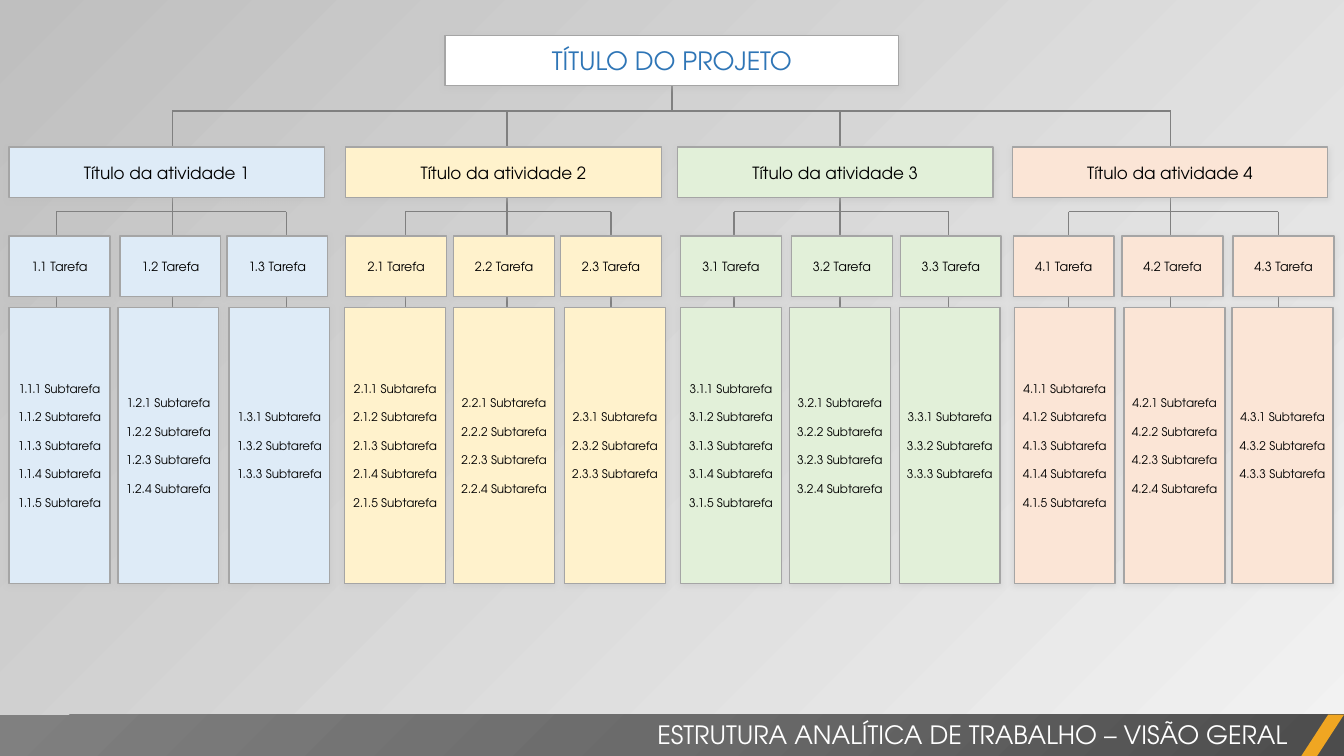
from lxml import etree
from pptx import Presentation
from pptx.dml.color import RGBColor
from pptx.enum.shapes import MSO_CONNECTOR, MSO_SHAPE
from pptx.enum.text import MSO_ANCHOR, MSO_AUTO_SIZE, PP_ALIGN
from pptx.oxml import parse_xml
from pptx.oxml.ns import qn
from pptx.util import Inches, Pt

STRAIGHT = MSO_CONNECTOR.STRAIGHT
RECTANGLE, SLANT = MSO_SHAPE.RECTANGLE, MSO_SHAPE.PARALLELOGRAM
MIDDLE, TOP = MSO_ANCHOR.MIDDLE, MSO_ANCHOR.TOP
CENTER, RIGHT = PP_ALIGN.CENTER, PP_ALIGN.RIGHT
FIXED = MSO_AUTO_SIZE.NONE

WIDTH, HEIGHT = 13.33, 7.5
FONT = "TeX Gyre Adventor"
COLORS = {
    "white": "FFFFFF", "black": "000000", "title": "2E75B6",
    "edge": "A5A5A5", "link": "808080", "shadow": "BFBFBF",
    "light": "F2F2F2", "dark": "BFBFBF", "accent": "F0A622",
    "bar_start": "4C4C4C", "bar_middle": "6B6B6B", "bar_end": "808080",
}
GROUPS = [
    {"fill": "DEEBF7", "activity": 0.09, "stems": [0.56, 1.71, 2.84],
     "tasks": [0.09, 1.19, 2.25], "subtasks": [0.09, 1.17, 2.27]},
    {"fill": "FFF2CC", "activity": 3.43, "stems": [4.02, 5.03, 6.06],
     "tasks": [3.43, 4.5, 5.56], "subtasks": [3.42, 4.5, 5.6]},
    {"fill": "E2F0D9", "activity": 6.72, "stems": [7.28, 8.33, 9.41],
     "tasks": [6.75, 7.85, 8.93], "subtasks": [6.75, 7.83, 8.92]},
    {"fill": "FBE5D6", "activity": 10.04, "stems": [10.6, 11.61, 12.68],
     "tasks": [10.05, 11.13, 12.23], "subtasks": [10.06, 11.15, 12.22]},
]
SUBTASK_COUNTS = [5, 4, 3]
ACTIVITY_SIZE, TASK_SIZE = (3.13, 0.5), (1, 0.6)
ACTIVITY_DROP, TASK_DROP, SUBTASK_DROP = 1.11, 1.99, 2.7
MAIN_BUS_DROP, GROUP_BUS_DROP, STEM_END_DROP = 0.75, 1.75, 2.98
DRAWING = "http://schemas.openxmlformats.org/drawingml/2006/main"


def rgb(value):
    return RGBColor.from_string(value)


def inches(*lengths):
    return [Inches(length) for length in lengths]


def set_text(frame, lines, size, color, align=CENTER, gap=0, **settings):
    for name, value in {"word_wrap": True, "vertical_anchor": MIDDLE, **settings}.items():
        setattr(frame, name, value)
    for index, line in enumerate(lines):
        para = frame.add_paragraph() if index else frame.paragraphs[0]
        para.alignment = align
        if index and gap:
            para.space_before = Pt(gap)
        span = para.add_run()
        span.text = line
        for name, value in {"name": FONT, "size": Pt(size)}.items():
            setattr(span.font, name, value)
        span.font.color.rgb = rgb(color)


def add_shadow(shape):
    shape.shadow.inherit = False
    effects = shape.element.spPr.find(qn("a:effectLst"))
    outer = etree.SubElement(effects, qn("a:outerShdw"), blurRad="50800",
                             dist="12700", dir="5400000", algn="t", rotWithShape="0")
    tint = etree.SubElement(outer, qn("a:srgbClr"), val=COLORS["shadow"])
    etree.SubElement(tint, qn("a:alpha"), val="40000")


def add_card(page, box, fill, lines, size, color=COLORS["black"], **text_settings):
    card = page.shapes.add_shape(RECTANGLE, *inches(*box))
    card.fill.solid()
    card.fill.fore_color.rgb = rgb(fill)
    card.line.color.rgb = rgb(COLORS["edge"])
    card.line.width = Pt(1)
    add_shadow(card)
    set_text(card.text_frame, lines, size, color, **text_settings)


def add_link(page, start, end):
    link = page.shapes.add_connector(STRAIGHT, *inches(*start, *end))
    link.line.color.rgb = rgb(COLORS["link"])
    link.line.width = Pt(1)
    etree.SubElement(link.element.spPr, qn("a:effectLst"))


def add_links(page, box):
    left, top, width, height = box
    main_bus, group_bus = top + MAIN_BUS_DROP, top + GROUP_BUS_DROP
    center = left + width / 2
    add_link(page, (center, top + 0.24), (center, main_bus))
    middles = [left + group["stems"][1] for group in GROUPS]
    add_link(page, (middles[0], main_bus), (middles[-1], main_bus))
    for group in GROUPS:
        stems = [left + stem for stem in group["stems"]]
        add_link(page, (stems[0], group_bus), (stems[-1], group_bus))
        for stem, start in zip(stems, [group_bus, main_bus, group_bus]):
            add_link(page, (stem, start), (stem, top + STEM_END_DROP))


def add_group(page, box, number, group):
    left, top, width, height = box
    fill = group["fill"]
    add_card(page, (left + group["activity"], top + ACTIVITY_DROP, *ACTIVITY_SIZE), fill,
             [f"Título da atividade {number}"], 12)
    columns = zip(group["tasks"], group["subtasks"], SUBTASK_COUNTS)
    for column, (task_left, subtask_left, count) in enumerate(columns, 1):
        task = f"{number}.{column}"
        add_card(page, (left + task_left, top + TASK_DROP, *TASK_SIZE), fill,
                 [f"{task} Tarefa"], 9)
        names = [f"{task}.{item} Subtarefa" for item in range(1, count + 1)]
        add_card(page, (left + subtask_left, top + SUBTASK_DROP, TASK_SIZE[0],
                        height - SUBTASK_DROP), fill, names, 8.5,
                 gap=10.2, margin_left=0, margin_right=0)


def add_breakdown(page, box):
    left, top, width, height = box
    add_links(page, box)
    add_card(page, (left + (width - 4.5) / 2, top, 4.5, 0.5), COLORS["white"],
             ["TÍTULO DO PROJETO"], 18, COLORS["title"])
    for number, group in enumerate(GROUPS, 1):
        add_group(page, box, number, group)


def bar_gradient():
    stops = "".join(
        f'<a:gs pos="{position}"><a:srgbClr val="{COLORS[name]}"/></a:gs>'
        for position, name in [(0, "bar_start"), (50000, "bar_middle"), (100000, "bar_end")]
    )
    return parse_xml(
        f'<a:gradFill xmlns:a="{DRAWING}" rotWithShape="1"><a:gsLst>{stops}</a:gsLst>'
        '<a:path path="circle"><a:fillToRect l="100000" t="100000"/></a:path></a:gradFill>'
    )


def add_footer(page, box):
    left, top, width, height = box
    bar = page.shapes.add_shape(RECTANGLE, *inches(*box))
    bar.fill.background()
    properties = bar.element.spPr
    properties.replace(properties.find(qn("a:noFill")), bar_gradient())
    accent = page.shapes.add_shape(SLANT, *inches(left + width - 0.43, top, 0.43, height))
    accent.adjustments[0] = 0.65
    accent.fill.solid()
    accent.fill.fore_color.rgb = rgb(COLORS["accent"])
    for shape in (bar, accent):
        shape.line.fill.background()
        shape.shadow.inherit = False

    title = page.shapes.title
    title.left, title.top, title.width, title.height = inches(left + 3.36, top, 9.51, 0.4)
    set_text(title.text_frame, ["ESTRUTURA ANALÍTICA DE TRABALHO – VISÃO GERAL"], 18,
             COLORS["white"], RIGHT, vertical_anchor=TOP, auto_size=FIXED)
    title.element.getparent().append(title.element)


def paint_background(page):
    fill = page.background.fill
    fill.gradient()
    fill.gradient_angle = 135
    for stop, name in zip(fill.gradient_stops, ["light", "dark"]):
        stop.color.rgb = rgb(COLORS[name])


def main():
    deck = Presentation()
    deck.slide_width, deck.slide_height = inches(WIDTH, HEIGHT)
    page = deck.slides.add_slide(deck.slide_layouts[5])
    paint_background(page)
    add_breakdown(page, (0, 0.35, WIDTH, 5.44))
    add_footer(page, (0, 7.09, WIDTH, 0.42))
    deck.save("out.pptx")


if __name__ == "__main__":
    main()
